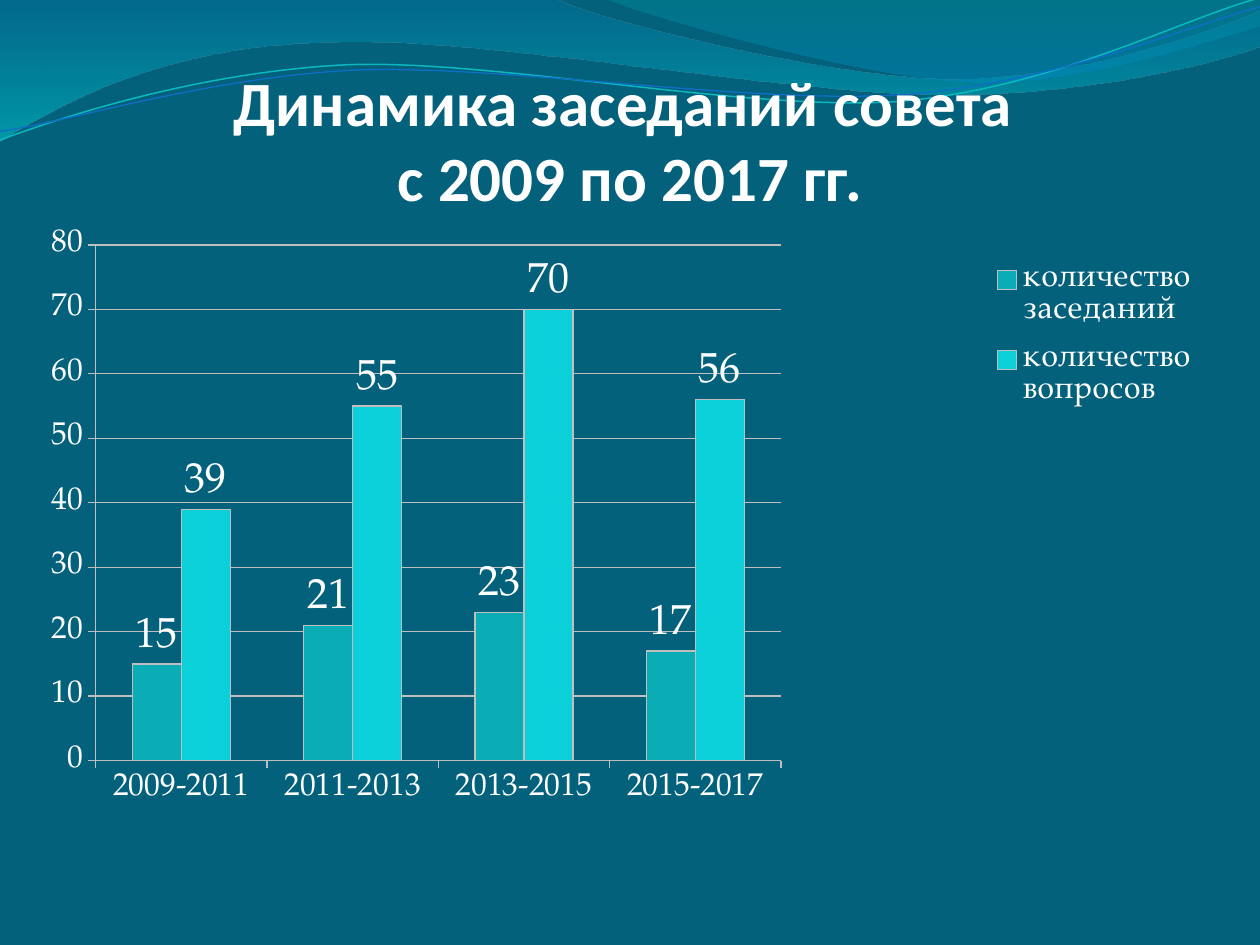
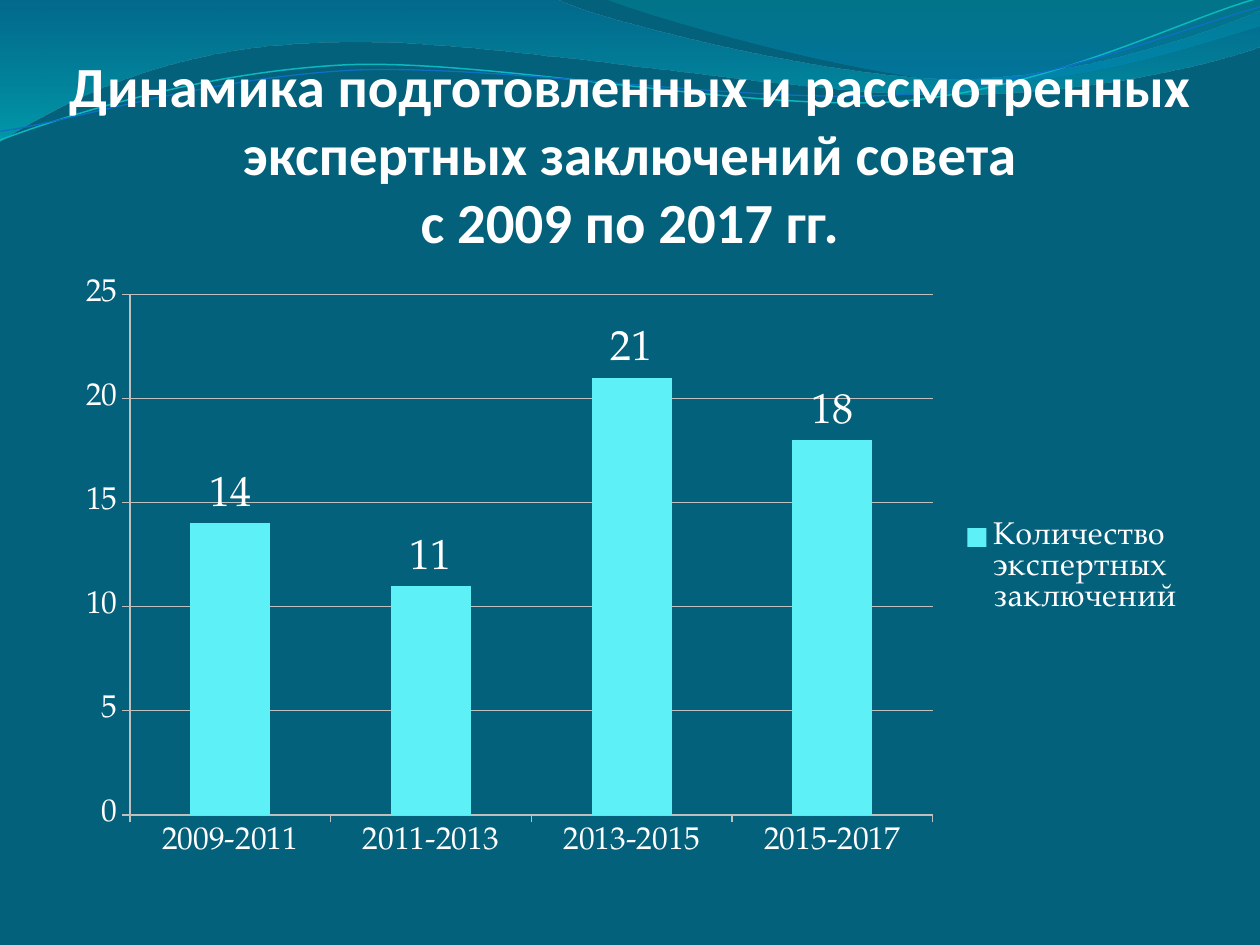
from lxml import etree
from pptx import Presentation
from pptx.chart.data import CategoryChartData
from pptx.dml.color import RGBColor
from pptx.enum.chart import XL_CHART_TYPE, XL_LABEL_POSITION, XL_LEGEND_POSITION, XL_TICK_MARK
from pptx.enum.text import MSO_ANCHOR, MSO_AUTO_SIZE, PP_ALIGN
from pptx.oxml.ns import qn
from pptx.util import Pt

COLORS = {
    "back": "04617B", "text": "FFFFFF", "grid": "BFBFBF",
    "wave_blue": "0074A1", "wave_teal": "00C6CF",
    "crest_teal": "00A1A9", "crest_blue": "008BBF",
    "line_teal": "0AB8BF", "line_blue": "0F6FC6",
    "meetings": "0AACB6", "questions": "0BD0DA", "reports": "5EF0F7",
}
RGB = {name: RGBColor.from_string(value) for name, value in COLORS.items()}
TITLE_FONT, CHART_FONT = "Calibri", "TeX Gyre Pagella"
PERIODS = ["2009-2011", "2011-2013", "2013-2015", "2015-2017"]

# Waves: pairs are straight segments, sixes are Bezier curves
BANDS = [
    ((0, 0), [(317, -1), (343, 12, 478, 45, 546, 45), (614, 45, 690, 19, 720, 6),
              (721, 26), (708, 32, 626, 55, 537, 54), (448, 54, 275, 20, 185, 24),
              (93, 26, 33, 60, -1, 81)],
     [(0, "wave_blue", 45), (1, "wave_teal", 55)]),
    ((345, -1), [(366, 8, 491, 45, 554, 47), (616, 50, 692, 23, 720, 15), (720, 0)],
     [(0, "crest_teal", 30), (0.8, "crest_blue", 45)]),
]
LINES = [
    ((0, 80), [(35, 67, 114, 41, 199, 37), (284, 34, 427, 64, 513, 58),
               (600, 51, 675, 11, 719, -1)], "line_teal", 0.85),
    ((0, 75), [(34, 71, 118, 44, 204, 40), (290, 37, 430, 60, 516, 54),
               (602, 48, 678, 15, 720, 4)], "line_blue", 0.75),
]

# Boxes are left, top, width, height in points; layouts are fractions of the chart
SLIDES = [
    dict(title=["Динамика заседаний совета ", "с 2009 по 2017 гг."],
         size=36, title_box=(36, 37.5, 648, 85), chart_box=(20, 122.75, 680, 375),
         plot=(0.051, 0.046, 0.576, 0.786), legend=(0.795, 0.05, 0.19, 0.27),
         top=80, step=10, outline=True,
         series=[("количество заседаний", [15, 21, 23, 17], "meetings"),
                 ("количество вопросов", [39, 55, 70, 56], "questions"),
                 ("Столбец1", [], "questions")]),
    dict(title=["Динамика подготовленных и рассмотренных экспертных заключений совета",
                "с 2009 по 2017 гг."],
         size=32.4, title_box=(36, 55.5, 648, 90), chart_box=(36, 152.75, 648, 345.5),
         plot=(0.059, 0.045, 0.708, 0.861), legend=(0.79, 0.414, 0.2, 0.17),
         top=25, step=5, outline=False,
         series=[("Количество экспертных заключений", [14, 11, 21, 18], "reports")]),
]


def add_wave(shapes, start, segments, closed):
    points = [pt for seg in segments for pt in zip(seg[::2], seg[1::2])]
    builder = shapes.build_freeform(Pt(start[0]), Pt(start[1]))
    builder.add_line_segments([(Pt(x), Pt(y)) for x, y in points], close=closed)
    sp = builder.convert_to_shape()
    sp.shadow.inherit = False
    # Join the three points of each curve into one Bezier segment
    steps = iter(list(sp.element.iter(qn("a:lnTo"))))
    for seg in segments:
        step = next(steps)
        if len(seg) == 6:
            curve = etree.Element(qn("a:cubicBezTo"))
            step.addprevious(curve)
            for part in (step, next(steps), next(steps)):
                curve.append(part[0])
                part.getparent().remove(part)
    return sp


def set_layout(parent, index, box, inner=False):
    for old in parent.findall(qn("c:layout")):
        parent.remove(old)
    layout = etree.Element(qn("c:layout"))
    manual = etree.SubElement(layout, qn("c:manualLayout"))
    items = [("layoutTarget", "inner")] if inner else []
    items += [("xMode", "edge"), ("yMode", "edge"), *zip("xywh", box)]
    for tag, value in items:
        etree.SubElement(manual, qn("c:" + tag), val=str(value))
    parent.insert(index, layout)


prs = Presentation()
prs.slide_width, prs.slide_height = Pt(720), Pt(540)
title_only = prs.slide_layouts[5]
slides = [prs.slides.add_slide(title_only) for _ in SLIDES]

# Shared background
master = prs.slide_master
master.background.fill.solid()
master.background.fill.fore_color.rgb = RGB["back"]

# Shared waves, moved to the back of the master
waves = []
for start, segments, stops in BANDS:
    sp = add_wave(slides[0].shapes, start, segments, True)
    sp.line.fill.background()
    sp.fill.gradient()
    sp.fill.gradient_angle = 270
    for stop, (position, color, _) in zip(sp.fill.gradient_stops, stops):
        stop.position = position
        stop.color.rgb = RGB[color]
    for clr, (_, _, alpha) in zip(sp.element.spPr.iter(qn("a:srgbClr")), stops):
        etree.SubElement(clr, qn("a:alpha"), val=str(alpha * 1000))
    waves.append(sp)
for start, segments, color, width in LINES:
    sp = add_wave(slides[0].shapes, start, segments, False)
    sp.fill.background()
    sp.line.color.rgb = RGB[color]
    sp.line.width = Pt(width)
    waves.append(sp)
for i, sp in enumerate(waves):
    master.element.cSld.spTree.insert(2 + i, sp.element)

for s, info in zip(slides, SLIDES):
    # Title
    title = s.shapes.title
    title.left, title.top, title.width, title.height = map(Pt, info["title_box"])
    tf = title.text_frame
    tf.word_wrap = True
    tf.auto_size = MSO_AUTO_SIZE.NONE
    tf.vertical_anchor = MSO_ANCHOR.BOTTOM
    tf.margin_left = tf.margin_right = tf.margin_bottom = 0
    tf.margin_top = Pt(3.6)
    p = tf.paragraphs[0]
    p.alignment = PP_ALIGN.CENTER
    for i, line in enumerate(info["title"]):
        if i:
            p.add_line_break()
        r = p.add_run()
        r.text = line
        r.font.name = TITLE_FONT
        r.font.size = Pt(info["size"])
        r.font.bold = True
        r.font.color.rgb = RGB["text"]

    # Chart
    data = CategoryChartData()
    data.categories = PERIODS
    for name, values, _ in info["series"]:
        data.add_series(name, values)
    chart = s.shapes.add_chart(XL_CHART_TYPE.COLUMN_CLUSTERED,
                               *map(Pt, info["chart_box"]), data).chart
    chart.has_title = False
    chart.font.name = CHART_FONT
    chart.font.size = Pt(18)
    chart.font.color.rgb = RGB["text"]
    chart.has_legend = True
    chart.legend.position = XL_LEGEND_POSITION.RIGHT
    chart.legend.include_in_layout = False
    legend = chart.element.find(".//" + qn("c:legend"))
    set_layout(chart.element.find(".//" + qn("c:plotArea")), 0, info["plot"], inner=True)
    set_layout(legend, 1, info["legend"])

    # Columns and their values; a series without values gets no legend entry
    plot = chart.plots[0]
    plot.gap_width = 150
    plot.overlap = 0
    plot.vary_by_categories = False
    for i, (ser, (_, numbers, color)) in enumerate(zip(plot.series, info["series"])):
        ser.format.fill.solid()
        ser.format.fill.fore_color.rgb = RGB[color]
        if info["outline"]:
            ser.format.line.color.rgb = RGB["grid"]
            ser.format.line.width = Pt(0.75)
        else:
            ser.format.line.fill.background()
        if not numbers:
            entry = etree.Element(qn("c:legendEntry"))
            etree.SubElement(entry, qn("c:idx"), val=str(i))
            etree.SubElement(entry, qn("c:delete"), val="1")
            legend.insert(1, entry)
            continue
        labels = ser.data_labels
        labels.show_value = True
        labels.position = XL_LABEL_POSITION.OUTSIDE_END
        labels.font.name = CHART_FONT
        labels.font.size = Pt(24)
        labels.font.color.rgb = RGB["text"]

    # Axes and grid
    values = chart.value_axis
    values.minimum_scale, values.maximum_scale = 0, info["top"]
    values.major_unit = info["step"]
    values.has_major_gridlines = True
    for axis in (chart.category_axis, values):
        axis.major_tick_mark = XL_TICK_MARK.OUTSIDE
        axis.minor_tick_mark = XL_TICK_MARK.NONE
    for item in (chart.category_axis, values, values.major_gridlines):
        item.format.line.color.rgb = RGB["grid"]
        item.format.line.width = Pt(0.75)

prs.save("out.pptx")
